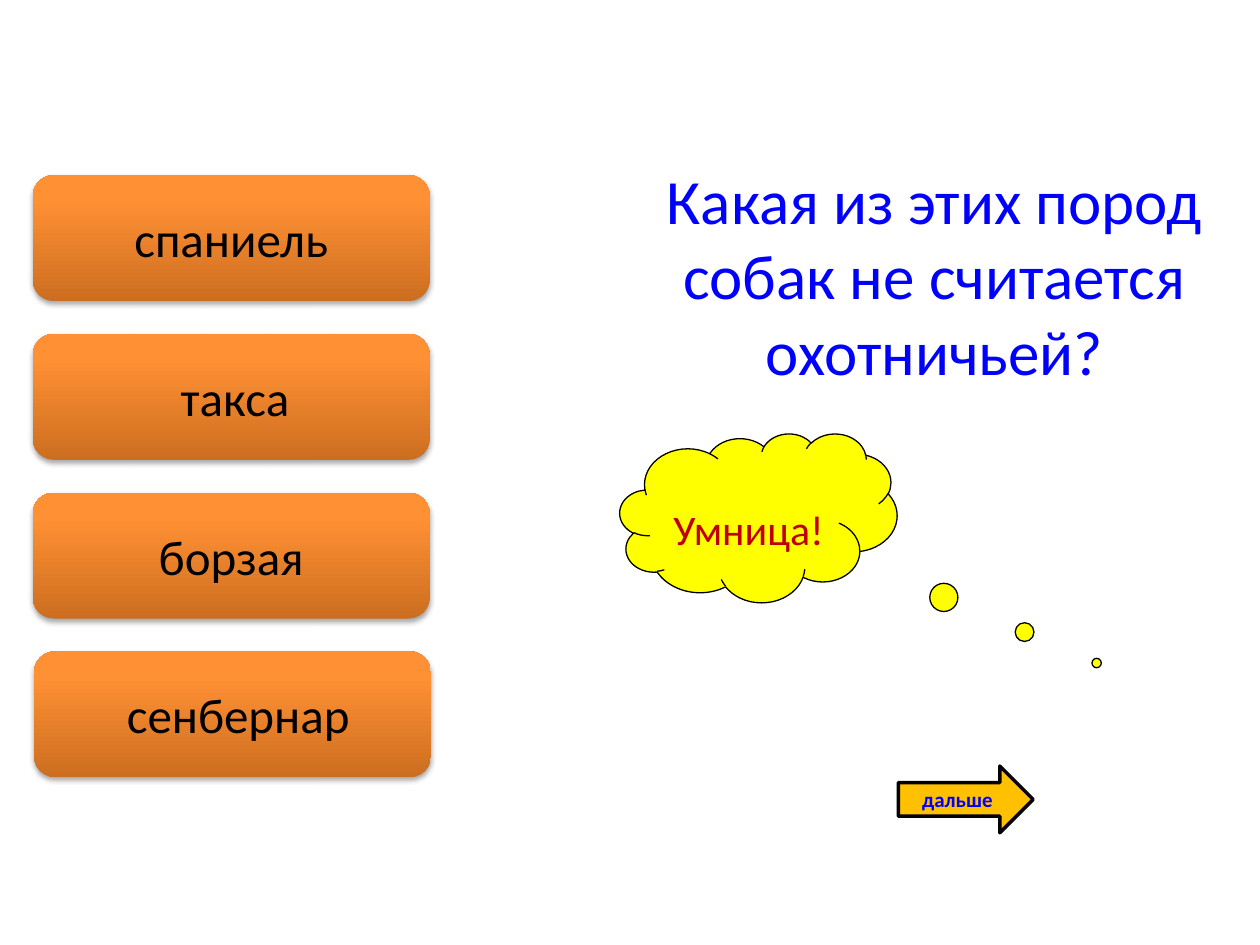
from copy import deepcopy

from lxml import etree
from pptx import Presentation
from pptx import util as u
from pptx.dml.color import RGBColor
from pptx.enum import shapes, text
from pptx.oxml import ns

Inches, Pt = u.Inches, u.Pt
FONT = "Calibri"
COLORS = {
    "black": "000000",
    "question": "0000FF",
    "praise": "C00000",
    "cloud": "FFFF00",
    "arrow": "FFC000",
}
BUTTON_STOPS = [(0, "CC6E20"), (0.8, "FF9034"), (1, "FF9136")]
# Each answer with its left edge and the extra left inset of its text
ANSWERS = [
    ("спаниель", 0.26, 0),
    ("такса", 0.26, 0.06),
    ("борзая", 0.26, 0),
    ("сенбернар", 0.27, 0.09),
]


def rgb(value):
    return RGBColor.from_string(value)


def write(shape, words, size, color, anchor, bold=False):
    frame = shape.text_frame
    frame.text = words
    frame.word_wrap = True
    frame.vertical_anchor = anchor
    paragraph = frame.paragraphs[0]
    paragraph.alignment = text.PP_ALIGN.CENTER
    font = paragraph.runs[0].font
    font.name, font.size, font.bold = FONT, Pt(size), bold
    font.color.rgb = rgb(color)


def add_outlined(slide, kind, box, fill, line_width):
    shape = slide.shapes.add_shape(kind, *map(Inches, box))
    shape.shadow.inherit = False
    shape.fill.solid()
    shape.fill.fore_color.rgb = rgb(fill)
    shape.line.color.rgb = rgb(COLORS["black"])
    shape.line.width = Pt(line_width)
    return shape


def fill_gradient(shape):
    shape.fill.gradient()
    shape.fill.gradient_angle = 90
    stop_list = shape._element.spPr.find(".//" + ns.qn("a:gsLst"))
    stop_list.append(deepcopy(stop_list[-1]))
    for stop, (position, color) in zip(shape.fill.gradient_stops, BUTTON_STOPS):
        stop.position = position
        stop.color.rgb = rgb(color)


def cast_shadow(shape):
    shape.shadow.inherit = False
    effects = shape._element.spPr.find(ns.qn("a:effectLst"))
    shadow = etree.SubElement(
        effects, ns.qn("a:outerShdw"), blurRad=str(Pt(3.1)),
        dist=str(Pt(1.8)), dir="5400000", rotWithShape="0")
    color = etree.SubElement(shadow, ns.qn("a:srgbClr"), val=COLORS["black"])
    etree.SubElement(color, ns.qn("a:alpha"), val="35000")


def add_question(slide, box):
    title = slide.shapes.title
    title.left, title.top, title.width, title.height = map(Inches, box)
    write(title, "Какая из этих пород собак не считается охотничьей?",
          36, COLORS["question"], text.MSO_ANCHOR.TOP)
    title.text_frame.auto_size = text.MSO_AUTO_SIZE.NONE


def add_answers(slide, top, width, height, pitch):
    for row, (answer, left, inset) in enumerate(ANSWERS):
        button = slide.shapes.add_shape(
            shapes.MSO_SHAPE.ROUNDED_RECTANGLE, Inches(left),
            Inches(top + row * pitch), Inches(width), Inches(height))
        fill_gradient(button)
        button.line.fill.background()
        cast_shadow(button)
        write(button, answer, 28, COLORS["black"], text.MSO_ANCHOR.MIDDLE)
        button.text_frame.margin_left = Inches(0.1 + inset)


def add_praise(slide, box):
    cloud = add_outlined(slide, shapes.MSO_SHAPE.CLOUD_CALLOUT, box,
                         COLORS["cloud"], 0.75)
    cloud.adjustments[0], cloud.adjustments[1] = 1.22, 0.86
    write(cloud, "Умница!", 24, COLORS["praise"], text.MSO_ANCHOR.TOP)
    cloud.text_frame.margin_top = Inches(0.35)


def add_next_arrow(slide, box):
    arrow = add_outlined(slide, shapes.MSO_SHAPE.RIGHT_ARROW, box,
                         COLORS["arrow"], 2)
    write(arrow, "дальше", 12, COLORS["question"], text.MSO_ANCHOR.MIDDLE,
          bold=True)


def main():
    deck = Presentation()
    deck.slide_width, deck.slide_height = Inches(10), Inches(7.5)
    slide = deck.slides.add_slide(deck.slide_layouts[5])  # title only

    add_question(slide, (5.17, 1.23, 4.49, 1.92))
    add_praise(slide, (4.92, 3.44, 2.2, 1.34))
    add_next_arrow(slide, (7.13, 6.08, 1.07, 0.53))
    add_answers(slide, top=1.39, width=3.15, height=1, pitch=1.26)

    deck.save("out.pptx")


if __name__ == "__main__":
    main()
